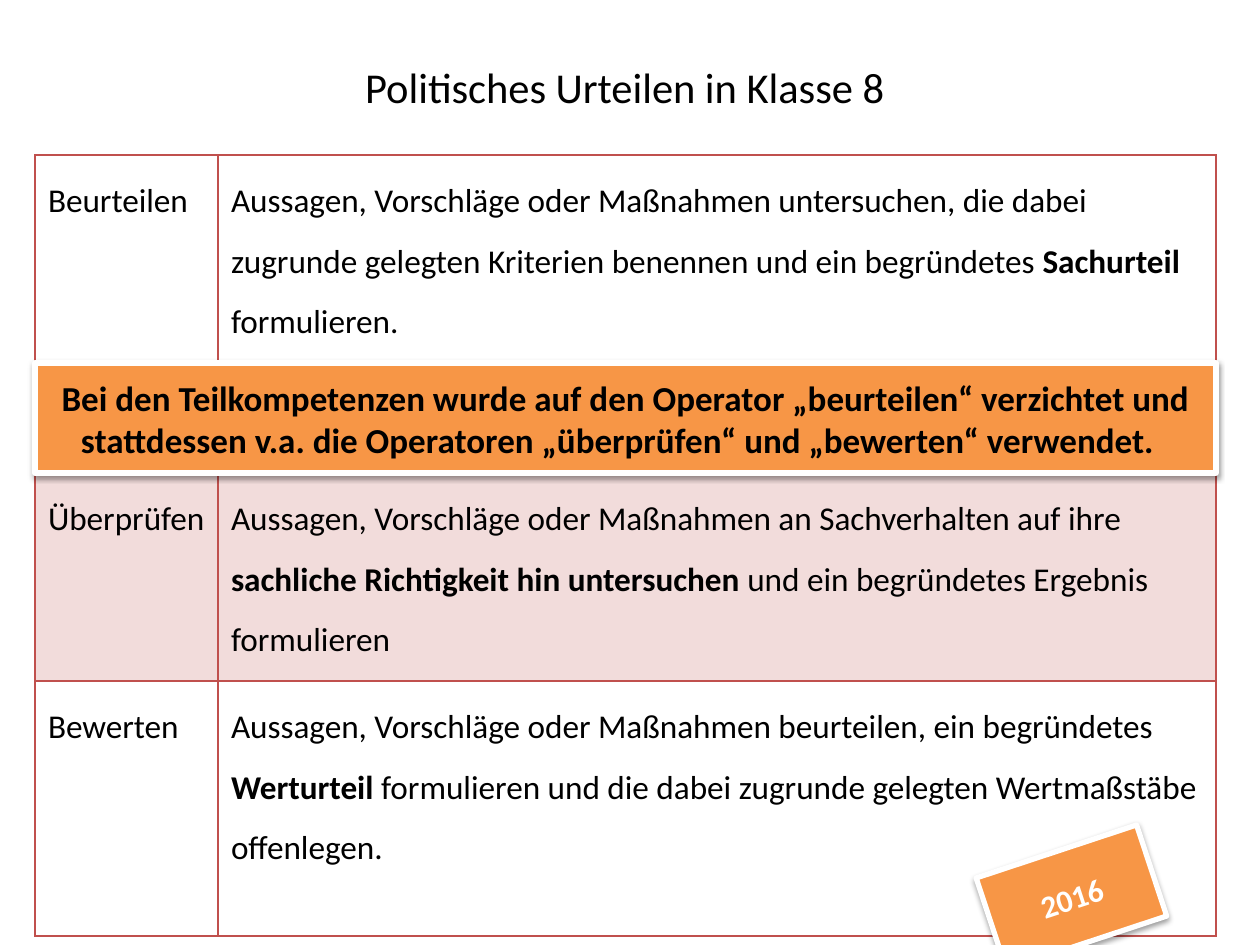
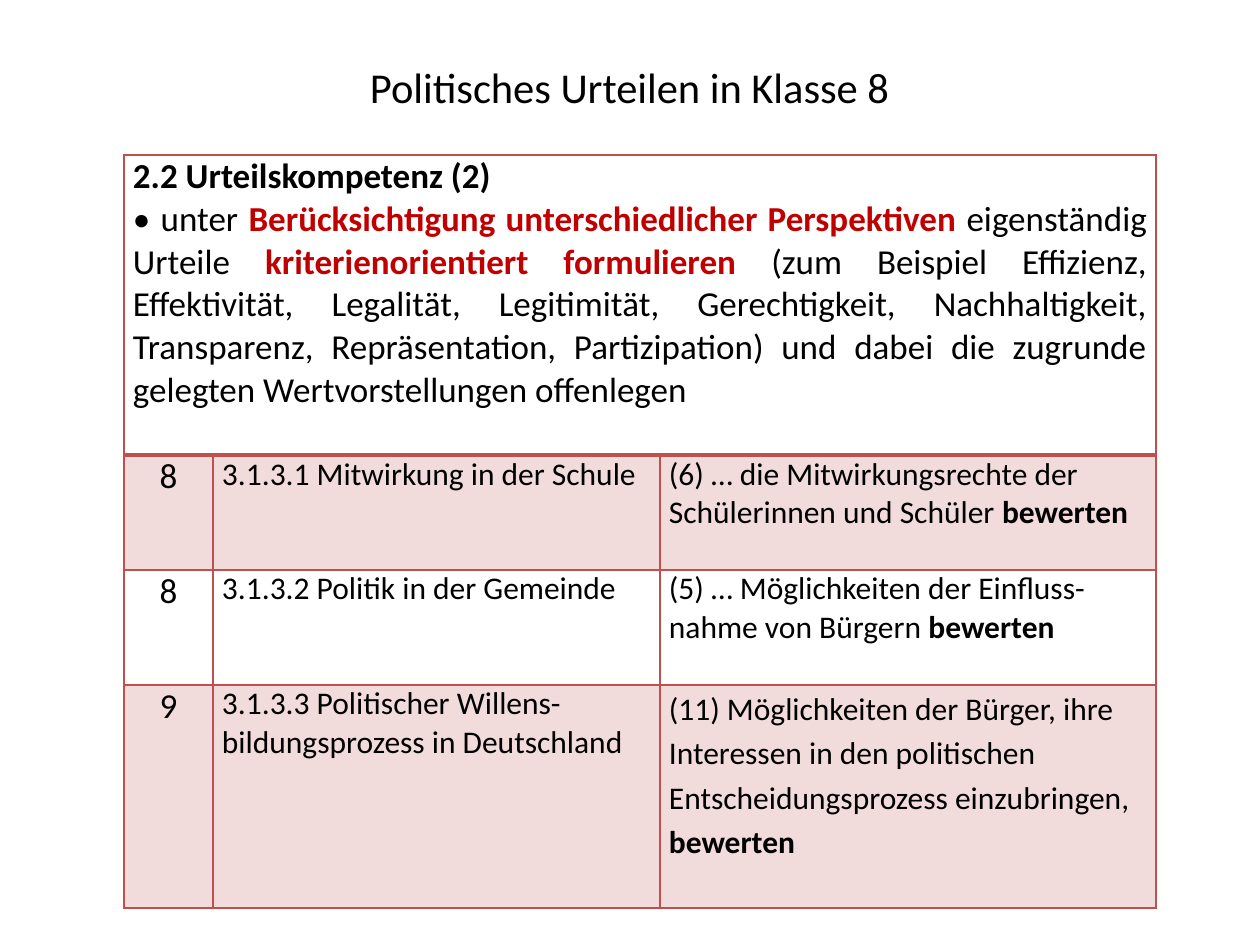
"""Build two slides on political judgement in class 8."""
from dataclasses import dataclass
from typing import NamedTuple

from lxml import etree
from pptx import Presentation
from pptx.dml.color import RGBColor
from pptx.enum.shapes import MSO_SHAPE
from pptx.enum.text import MSO_ANCHOR, PP_ALIGN
from pptx.oxml.ns import qn
from pptx.util import Emu, Pt

LEFT, CENTER, JUSTIFY = PP_ALIGN.LEFT, PP_ALIGN.CENTER, PP_ALIGN.JUSTIFY
TOP, MIDDLE = MSO_ANCHOR.TOP, MSO_ANCHOR.MIDDLE
RECT = MSO_SHAPE.RECTANGLE
TITLE_ONLY = 5
PX_PER_INCH = 126
FONT = "Calibri"
COLORS = {
    "text": "000000",
    "white": "FFFFFF",
    "emphasis": "C00000",
    "table": "C0504D",
    "callout": "F79646",
    "shadow": "000000",
}


class Run(NamedTuple):
    """A piece of text in one style."""
    text: str
    bold: bool = False
    color: str = "text"


class Para(NamedTuple):
    """A paragraph of runs."""
    runs: list
    size: float = 20
    align: PP_ALIGN = LEFT
    spacing: float = 1.0
    after: int = 0


class Box(NamedTuple):
    """A place on the slide in px."""
    x: int
    y: int
    w: int
    h: int


@dataclass
class Grid:
    """A table with its layout in px."""
    x: int
    y: int
    cols: list
    rows: list
    cells: list
    shaded: set
    margin_x: int
    margin_y: int


@dataclass
class Callout:
    """An orange label with a white frame."""
    box: Box
    para: Para
    rotation: float = 0


def px(n: int) -> Emu:
    """Turn px into EMU."""
    return Emu(round(n * 914400 / PX_PER_INCH))


def rgb(name: str) -> RGBColor:
    """Look up a colour."""
    return RGBColor.from_string(COLORS[name])


def add_color(parent, name: str, alpha: int = 100) -> None:
    """Add a colour element with an opacity in percent."""
    clr = etree.SubElement(parent, qn("a:srgbClr"), val=COLORS[name])
    if alpha < 100:
        etree.SubElement(clr, qn("a:alpha"), val=str(alpha * 1000))


def write(tf, paras: list) -> None:
    """Fill a text frame with paragraphs."""
    for i, para in enumerate(paras):
        p = tf.add_paragraph() if i else tf.paragraphs[0]
        p.alignment, p.line_spacing = para.align, para.spacing
        p.space_before, p.space_after = Pt(0), Pt(para.after)
        for run in para.runs:
            r = p.add_run()
            r.text = run.text
            r.font.name, r.font.size = FONT, Pt(para.size)
            r.font.bold = run.bold
            r.font.color.rgb = rgb(run.color)


def add_title_slide(prs, title: str):
    """Add a slide with the shared title."""
    s = prs.slides.add_slide(prs.slide_layouts[TITLE_ONLY])
    sp = s.shapes.title
    sp.left, sp.top, sp.width, sp.height = map(px, Box(94, 55, 1071, 139))
    sp.text_frame.vertical_anchor = TOP
    write(sp.text_frame, [Para([Run(title)], 24.3, CENTER)])
    return s


def set_borders(cell, row: int) -> None:
    """Draw the cell borders, with a heavier line under the first row."""
    widths = {"L": 1, "R": 1, "T": 2 if row == 1 else 1, "B": 2 if row == 0 else 1}
    tcPr = cell._tc.get_or_add_tcPr()
    for i, (side, width) in enumerate(widths.items()):
        ln = etree.Element(qn(f"a:ln{side}"), w=str(Pt(width)))
        add_color(etree.SubElement(ln, qn("a:solidFill")), "table")
        tcPr.insert(i, ln)


def add_grid(s, grid: Grid):
    """Draw a table and return it."""
    size = Box(grid.x, grid.y, sum(grid.cols), sum(grid.rows))
    table = s.shapes.add_table(len(grid.rows), len(grid.cols), *map(px, size)).table
    table.first_row = table.horz_banding = False
    for col, width in zip(table.columns, grid.cols):
        col.width = px(width)
    for i, (row, height) in enumerate(zip(table.rows, grid.rows)):
        row.height = px(height)
        for j, cell in enumerate(row.cells):
            cell.margin_left = cell.margin_right = px(grid.margin_x)
            cell.margin_top = cell.margin_bottom = px(grid.margin_y)
            if i in grid.shaded:
                cell.fill.solid()
                cell.fill.fore_color.rgb = rgb("table")
                clr = cell._tc.tcPr.find(".//" + qn("a:srgbClr"))
                etree.SubElement(clr, qn("a:alpha"), val="20000")
            else:
                cell.fill.background()
            set_borders(cell, i)
            if j < len(grid.cells[i]):
                write(cell.text_frame, grid.cells[i][j])
    return table


def add_callout(s, callout: Callout) -> None:
    """Draw a framed label with a soft shadow."""
    sp = s.shapes.add_shape(RECT, *map(px, callout.box))
    sp.rotation = callout.rotation
    sp.fill.solid()
    sp.fill.fore_color.rgb = rgb("callout")
    sp.line.color.rgb = rgb("white")
    sp.line.width = Pt(3)
    sp.shadow.inherit = False
    effects = sp._element.spPr.find(qn("a:effectLst"))
    shadow = etree.SubElement(effects, qn("a:outerShdw"), blurRad="40000",
                              dist="20000", dir="5400000", rotWithShape="0")
    add_color(shadow, "shadow", 38)
    tf = sp.text_frame
    tf.word_wrap, tf.vertical_anchor = True, MIDDLE
    write(tf, [callout.para])


def operator_row(operator: str, *definition: Run) -> list:
    """Make a row with an operator and its definition."""
    return [[Para([*runs], 19, spacing=1.5)] for runs in ([Run(operator)], definition)]


def topic_row(grade: str, topic: str, task: str, spacing: float = 1.0, after: int = 0) -> list:
    """Make a row with a grade, a topic and a task to evaluate."""
    return [
        [Para([Run(grade)], align=CENTER)],
        [Para([Run(topic)], 18)],
        [Para([Run(task), Run("bewerten", True)], 18, spacing=spacing, after=after)],
    ]


OPERATORS = Grid(35, 155, [183, 998], [318, 208, 255], [
    operator_row(
        "Beurteilen",
        Run("Aussagen, Vorschläge oder Maßnahmen untersuchen, die dabei zugrunde "
            "gelegten Kriterien benennen und ein begründetes "),
        Run("Sachurteil", True), Run(" formulieren.")),
    operator_row(
        "Überprüfen",
        Run("Aussagen, Vorschläge oder Maßnahmen an Sachverhalten auf ihre "),
        Run("sachliche Richtigkeit hin untersuchen ", True),
        Run("und ein begründetes Ergebnis formulieren")),
    operator_row(
        "Bewerten",
        Run("Aussagen, Vorschläge oder Maßnahmen beurteilen, ein begründetes "),
        Run("Werturteil", True),
        Run(" formulieren und die dabei zugrunde gelegten Wertmaßstäbe offenlegen.")),
], {1}, 13, 6)

CALLOUTS = [
    Callout(Box(35, 363, 1181, 110), Para([Run(
        "Bei den Teilkompetenzen wurde auf den Operator „beurteilen“ verzichtet und "
        "stattdessen v.a. die Operatoren „überprüfen“ und „bewerten“ verwendet.  ",
        True)], align=CENTER)),
    Callout(Box(987, 849, 169, 96), Para([Run("2016", True, "white")], 18, CENTER), 341.7),
]

COMPETENCE = [
    Para([Run("2.2 Urteilskompetenz (2)", True)]),
    Para([
        Run("• unter "),
        Run("Berücksichtigung unterschiedlicher Perspektiven ", True, "emphasis"),
        Run("eigenständig Urteile "),
        Run("kriterienorientiert formulieren", True, "emphasis"),
        Run(" (zum Beispiel Effizienz, Effektivität, Legalität, Legitimität, "
            "Gerechtigkeit, Nachhaltigkeit, Transparenz, Repräsentation, Partizipation) "
            "und dabei die zugrunde gelegten Wertvorstellungen offenlegen"),
    ], align=JUSTIFY),
]

TOPICS = Grid(124, 155, [89, 447, 496], [300, 115, 115, 223], [
    [COMPETENCE],
    topic_row("8", "3.1.3.1 Mitwirkung in der Schule",
              "(6) … die Mitwirkungsrechte der Schülerinnen und Schüler "),
    topic_row("8", "3.1.3.2 Politik in der Gemeinde",
              "(5) … Möglichkeiten der Einfluss-nahme von Bürgern "),
    topic_row("9", "3.1.3.3 Politischer Willens-bildungsprozess in Deutschland",
              "(11) Möglichkeiten der Bürger, ihre Interessen in den politischen "
              "Entscheidungsprozess einzubringen, ", 1.15, 10),
], {1, 3}, 9, 0)


def build_operators(prs) -> None:
    """Build the slide that defines the operators."""
    s = add_title_slide(prs, "Politisches Urteilen in Klasse 8 ")
    add_grid(s, OPERATORS)
    for callout in CALLOUTS:
        add_callout(s, callout)


def build_topics(prs) -> None:
    """Build the slide that lists the topics."""
    s = add_title_slide(prs, "Politisches Urteilen in Klasse 8")
    table = add_grid(s, TOPICS)
    table.cell(0, 0).merge(table.cell(0, 2))


def main() -> None:
    """Build and save the presentation."""
    prs = Presentation()
    prs.slide_width, prs.slide_height = px(1260), px(945)
    build_operators(prs)
    build_topics(prs)
    prs.save("out.pptx")


if __name__ == "__main__":
    main()
